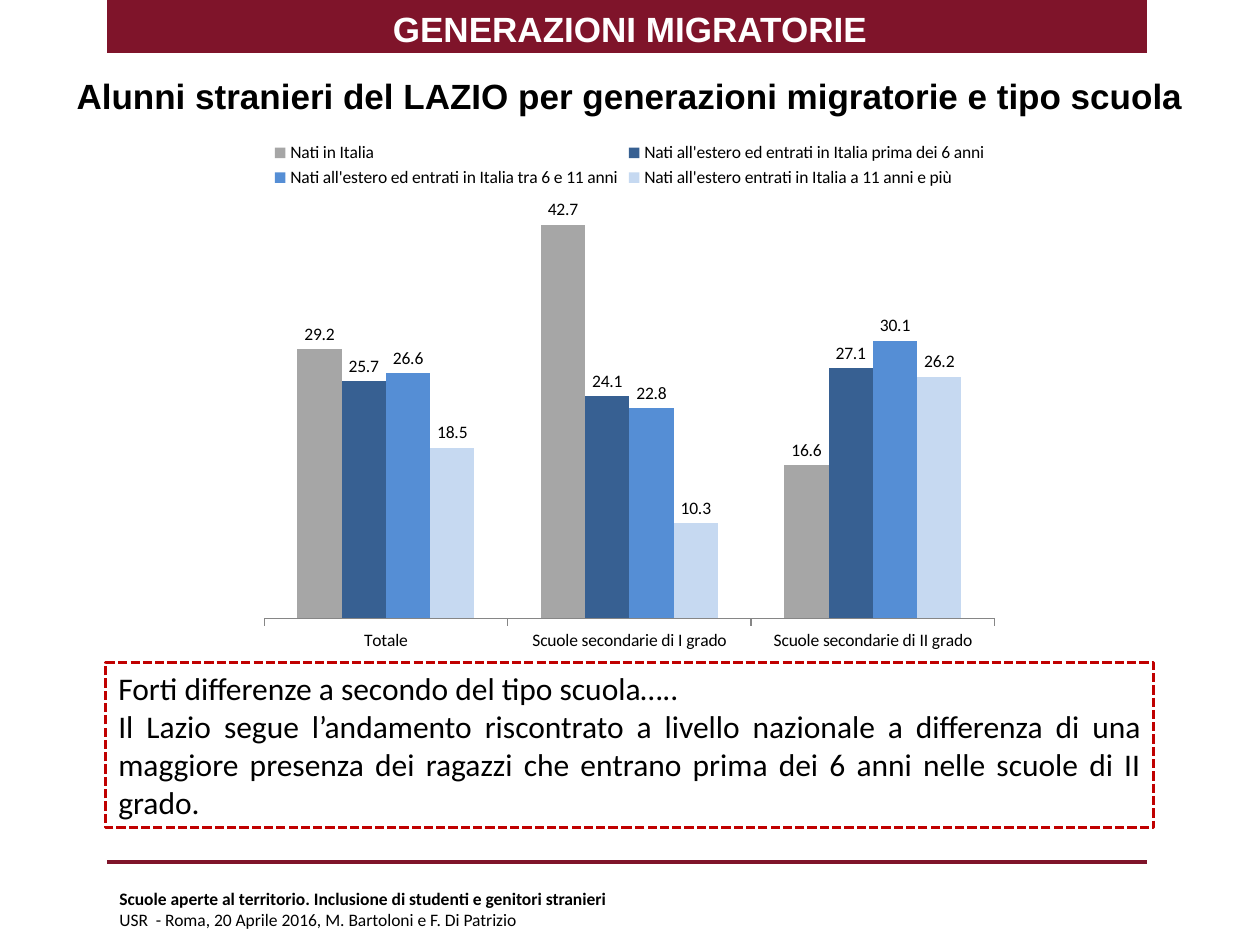
import pptx
import pptx.chart.data
import pptx.dml.color
import pptx.enum.chart
import pptx.enum.dml
import pptx.enum.shapes
import pptx.enum.text
import pptx.oxml
import pptx.oxml.ns
import pptx.util

RGBColor = pptx.dml.color.RGBColor
ALIGN = pptx.enum.text.PP_ALIGN
ANCHOR = pptx.enum.text.MSO_ANCHOR

BLACK = RGBColor(0x00, 0x00, 0x00)
WHITE = RGBColor(0xFF, 0xFF, 0xFF)
BURGUNDY = RGBColor(0x7F, 0x14, 0x2A)
RED = RGBColor(0xC0, 0x00, 0x00)
AXIS_GREY = RGBColor(0x86, 0x86, 0x86)
GREY = RGBColor(0xA6, 0xA6, 0xA6)
DARK_BLUE = RGBColor(0x37, 0x60, 0x92)
MID_BLUE = RGBColor(0x55, 0x8E, 0xD5)
PALE_BLUE = RGBColor(0xC6, 0xD9, 0xF1)

EMU_PER_PX = 914400 // 126
PAGE_WIDTH, PAGE_HEIGHT = 1260, 945

SCHOOLS = ["Totale", "Scuole secondarie di I grado", "Scuole secondarie di II grado"]
GENERATIONS = [
    ("Nati in Italia", [29.2, 42.7, 16.6], GREY),
    ("Nati all'estero ed entrati in Italia prima dei 6 anni", [25.7, 24.1, 27.1], DARK_BLUE),
    ("Nati all'estero ed entrati in Italia tra 6 e 11 anni", [26.6, 22.8, 30.1], MID_BLUE),
    ("Nati all'estero entrati in Italia a 11 anni e più", [18.5, 10.3, 26.2], PALE_BLUE),
]


def px(*lengths):
    return [pptx.util.Emu(length * EMU_PER_PX) for length in lengths]


class Painter:
    heading_font = "Arial"
    body_font = "Calibri"

    def __init__(self, page):
        self.page = page

    def rectangle(self, area, fill, line=None, width=1.75):
        """Draw a filled rectangle, with a dashed outline if a line colour is given."""
        box = self.page.shapes.add_shape(
            pptx.enum.shapes.MSO_SHAPE.RECTANGLE, *px(*area))
        box.shadow.inherit = False
        box.fill.solid()
        box.fill.fore_color.rgb = fill
        if line is None:
            box.line.fill.background()
        else:
            box.line.color.rgb = line
            box.line.width = pptx.util.Pt(width)
            box.line.dash_style = pptx.enum.dml.MSO_LINE.SQUARE_DOT
        return box

    def rule(self, left, right, top, color, width):
        line = self.page.shapes.add_connector(
            pptx.enum.shapes.MSO_CONNECTOR.STRAIGHT, *px(left, top, right, top))
        line.line.color.rgb = color
        line.line.width = pptx.util.Pt(width)
        line._element.spPr.append(pptx.oxml.parse_xml(
            "<a:effectLst %s/>" % pptx.oxml.ns.nsdecls("a")))

    def style(self, font, size, color=BLACK, name=body_font, bold=False):
        font.name = name
        font.size = pptx.util.Pt(size)
        font.color.rgb = color
        font.bold = bold

    def fill_text(self, box, texts, size, align, anchor=ANCHOR.TOP, **style):
        frame = box.text_frame
        frame.word_wrap = True
        frame.vertical_anchor = anchor
        for index, text in enumerate(texts):
            para = frame.add_paragraph() if index else frame.paragraphs[0]
            para.add_run().text = text
            para.alignment = align
            self.style(para.font, size, **style)
        return frame

    def text(self, area, texts, size, align, **style):
        box = self.page.shapes.add_textbox(*px(*area))
        return self.fill_text(box, texts, size, align, **style)

    def heading(self, area, text, color):
        self.text(area, [text], 20, ALIGN.CENTER, anchor=ANCHOR.MIDDLE,
                  color=color, name=self.heading_font, bold=True)

    def column_chart(self, area, categories, rows):
        data = pptx.chart.data.CategoryChartData()
        data.categories = categories
        for name, values, _ in rows:
            data.add_series(name, values)
        chart = self.page.shapes.add_chart(
            pptx.enum.chart.XL_CHART_TYPE.COLUMN_CLUSTERED, *px(*area), data).chart
        self.style(chart.font, 10)
        chart.has_title = False
        chart.has_legend = True
        chart.legend.position = pptx.enum.chart.XL_LEGEND_POSITION.TOP
        chart.legend.include_in_layout = False

        plot = chart.plots[0]
        plot.gap_width = 150
        plot.vary_by_categories = False
        for series, (_, _, color) in zip(plot.series, rows):
            series.format.fill.solid()
            series.format.fill.fore_color.rgb = color
            labels = series.data_labels
            labels.show_value = True
            labels.number_format = "#,##0.0"
            labels.number_format_is_linked = False
            labels.position = pptx.enum.chart.XL_LABEL_POSITION.OUTSIDE_END

        chart.category_axis.format.line.color.rgb = AXIS_GREY
        chart.category_axis.major_tick_mark = pptx.enum.chart.XL_TICK_MARK.OUTSIDE
        chart.value_axis.visible = False
        chart.value_axis.has_major_gridlines = False
        chart.value_axis.minimum_scale = 0
        chart.value_axis.maximum_scale = 45
        self.place_plot(chart, x=0.02, y=0.14, w=0.96, h=0.78)

    def place_plot(self, chart, **fractions):
        """Fix the inner plot area as fractions of the chart frame."""
        places = "".join('<c:%s val="%s"/>' % item for item in fractions.items())
        layout = pptx.oxml.parse_xml(
            '<c:layout %s><c:manualLayout><c:layoutTarget val="inner"/>'
            '<c:xMode val="edge"/><c:yMode val="edge"/>%s</c:manualLayout></c:layout>'
            % (pptx.oxml.ns.nsdecls("c"), places))
        plot_area = chart._chartSpace.chart.plotArea
        for old in plot_area.findall(pptx.oxml.ns.qn("c:layout")):
            plot_area.remove(old)
        plot_area.insert(0, layout)


def main():
    deck = pptx.Presentation()
    deck.slide_width, deck.slide_height = px(PAGE_WIDTH, PAGE_HEIGHT)
    painter = Painter(deck.slides.add_slide(deck.slide_layouts[6]))

    painter.rectangle((107, 0, 1040, 53), BURGUNDY)
    painter.rule(107, 1147, 862, BURGUNDY, 2)
    painter.heading((0, 40, PAGE_WIDTH, 112),
                    "Alunni stranieri del LAZIO per generazioni migratorie e tipo scuola", BLACK)
    comment = painter.rectangle((106, 663, 1048, 165), WHITE, RED)
    painter.fill_text(comment, [
        "Forti differenze a secondo del tipo scuola…..",
        "Il Lazio segue l’andamento riscontrato a livello nazionale a differenza di una "
        "maggiore presenza dei ragazzi che entrano prima dei 6 anni nelle scuole di II grado.",
    ], 18, ALIGN.JUSTIFY)
    painter.heading((0, -1, PAGE_WIDTH, 59), "GENERAZIONI MIGRATORIE", WHITE)
    painter.column_chart((249, 129, 761, 532), SCHOOLS, GENERATIONS)

    footer = painter.text(
        (107, 882, 1210, 55),
        ["Scuole aperte al territorio. Inclusione di studenti e genitori stranieri"],
        10, ALIGN.LEFT)
    para = footer.paragraphs[0]
    para.runs[0].font.bold = True
    para.add_line_break()
    para.add_run().text = "USR  - Roma, 20 Aprile 2016, M. Bartoloni e F. Di Patrizio"

    deck.save("out.pptx")


if __name__ == "__main__":
    main()
